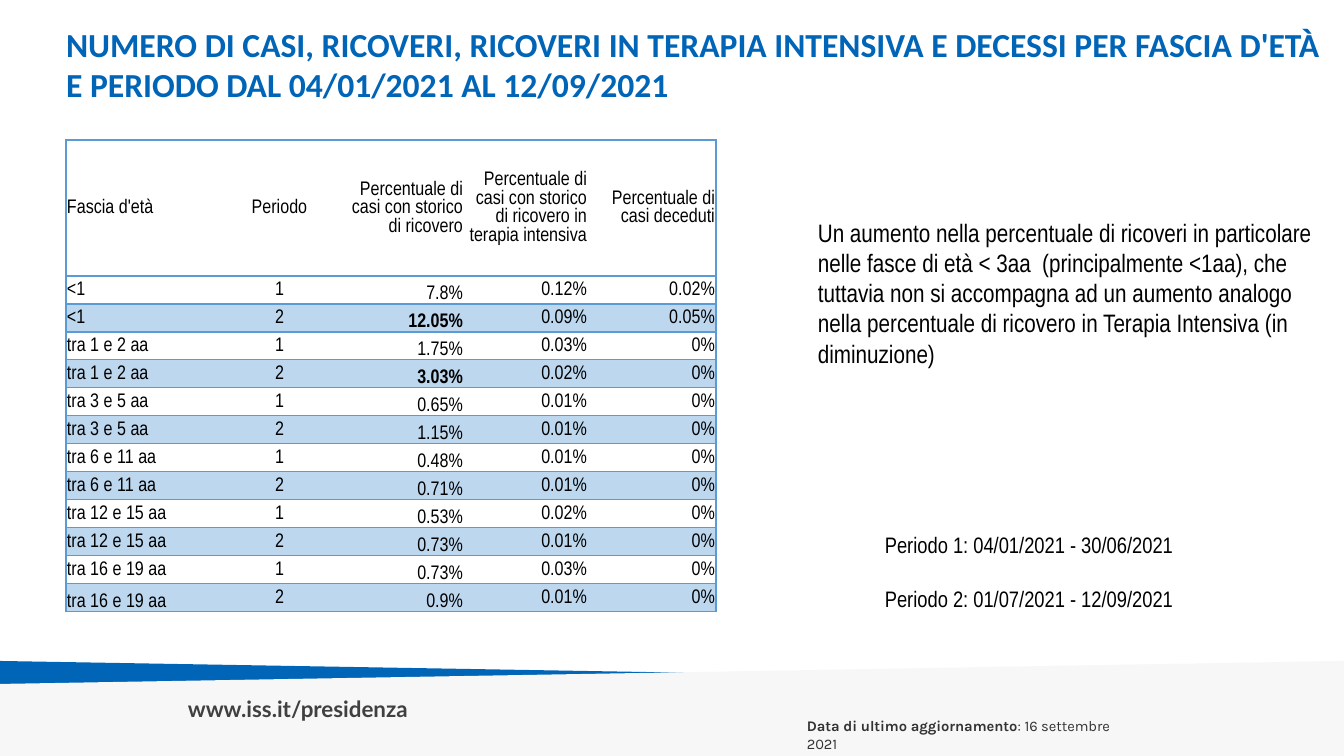
from dataclasses import dataclass
from typing import NamedTuple

from lxml.etree import SubElement
from pptx import Presentation
from pptx.dml.color import RGBColor
from pptx.enum.text import MSO_ANCHOR, MSO_AUTO_SIZE, PP_ALIGN
from pptx.oxml.ns import qn
from pptx.util import Pt

EMU_PER_PX = 914400 / 100.8
BLUE, PALE_BLUE, RULE_BLUE = "0064B7", "BDD7EE", "5B9BD5"
WHITE, BLACK, LIGHT_GREY = "FFFFFF", "000000", "F7F7F7"
NARROW = "Arial Narrow"


class Span(NamedTuple):
    text: str
    bold: bool = False


class Style(NamedTuple):
    font: str
    size: float
    color: str


@dataclass
class Note:
    box: tuple[int, int, int, int]
    style: Style
    paragraphs: list[list[Span]]
    wrap: bool = True
    gap: float = 0


class AgeRow(NamedTuple):
    age: str
    period: str
    admitted: str
    intensive: str
    deceased: str


class Column(NamedTuple):
    width: int
    align: PP_ALIGN


TITLE = ("NUMERO DI CASI, RICOVERI, RICOVERI IN TERAPIA INTENSIVA E DECESSI "
         "PER FASCIA D'ETÀ E PERIODO DAL 04/01/2021 AL 12/09/2021")
COLUMNS = [
    Column(152, PP_ALIGN.LEFT),
    Column(123, PP_ALIGN.CENTER),
    Column(123, PP_ALIGN.RIGHT),
    Column(124, PP_ALIGN.RIGHT),
    Column(128, PP_ALIGN.RIGHT),
]
ROWS = [
    AgeRow("Fascia d'età", "Periodo", "Percentuale di casi con storico di ricovero",
           "Percentuale di casi con storico di ricovero in terapia intensiva",
           "Percentuale di casi deceduti"),
    AgeRow("<1", "1", "7.8%", "0.12%", "0.02%"),
    AgeRow("<1", "2", "12.05%", "0.09%", "0.05%"),
    AgeRow("tra 1 e 2 aa", "1", "1.75%", "0.03%", "0%"),
    AgeRow("tra 1 e 2 aa", "2", "3.03%", "0.02%", "0%"),
    AgeRow("tra 3 e 5 aa", "1", "0.65%", "0.01%", "0%"),
    AgeRow("tra 3 e 5 aa", "2", "1.15%", "0.01%", "0%"),
    AgeRow("tra 6 e 11 aa", "1", "0.48%", "0.01%", "0%"),
    AgeRow("tra 6 e 11 aa", "2", "0.71%", "0.01%", "0%"),
    AgeRow("tra 12 e 15 aa", "1", "0.53%", "0.02%", "0%"),
    AgeRow("tra 12 e 15 aa", "2", "0.73%", "0.01%", "0%"),
    AgeRow("tra 16 e 19 aa", "1", "0.73%", "0.03%", "0%"),
    AgeRow("tra 16 e 19 aa", "2", "0.9%", "0.01%", "0%"),
]
HIGHLIGHTS = {"12.05%", "3.03%"}
HEADER_HEIGHT, ROW_HEIGHT = 136, 28

WEDGES = [
    (BLUE, [(1344, 684), (0, 661), (0, 756), (1344, 756)]),
    (LIGHT_GREY, [(0, 684), (1344, 661), (1344, 756), (0, 756)]),
]
NOTES = [
    Note((178, 690, 243, 37), Style("Lato", 16, "404040"),
         [[Span("www.iss.it/presidenza", True)]], wrap=False),
    Note((875, 526, 469, 122), Style(NARROW, 16, BLACK),
         [[Span("Periodo 1: 04/01/2021 - 30/06/2021")],
          [Span("Periodo 2: 01/07/2021 - 12/09/2021")]], gap=19.5),
    Note((797, 712, 339, 28), Style("Karla", 10.5, "333333"),
         [[Span("Data di ultimo aggiornamento", True), Span(": 16 settembre 2021")]]),
    Note((808, 212, 521, 163), Style(NARROW, 18, BLACK),
         [[Span("Un aumento nella percentuale di ricoveri in particolare nelle fasce "
                "di età < 3aa  (principalmente <1aa), che tuttavia non si accompagna ad "
                "un aumento analogo nella percentuale di ricovero in Terapia Intensiva "
                "(in diminuzione)")]]),
]


def px(length: int) -> int:
    return round(length * EMU_PER_PX)


def rgb(color: str) -> RGBColor:
    return RGBColor.from_string(color)


def add_span(paragraph, span: Span, style: Style) -> None:
    run = paragraph.add_run()
    run.text = span.text
    run.font.name = style.font
    run.font.size = Pt(style.size)
    run.font.bold = span.bold
    run.font.color.rgb = rgb(style.color)


def place_title(slide) -> None:
    title = slide.shapes.title
    title.left, title.top, title.width, title.height = map(px, (56, 19, 1288, 92))
    frame = title.text_frame
    frame.word_wrap = True
    frame.auto_size = MSO_AUTO_SIZE.NONE
    frame.vertical_anchor = MSO_ANCHOR.TOP
    frame.paragraphs[0].alignment = PP_ALIGN.LEFT
    add_span(frame.paragraphs[0], Span(TITLE, True), Style("Calibri", 24, BLUE))


def draw_wedge(slide, color: str, corners: list[tuple[int, int]]) -> None:
    builder = slide.shapes.build_freeform(*corners[0], scale=EMU_PER_PX)
    builder.add_line_segments(corners[1:], close=True)
    wedge = builder.convert_to_shape()
    wedge.shadow.inherit = False
    wedge.fill.solid()
    wedge.fill.fore_color.rgb = rgb(color)
    wedge.line.fill.background()


def draw_note(slide, note: Note) -> None:
    frame = slide.shapes.add_textbox(*map(px, note.box)).text_frame
    frame.word_wrap = note.wrap
    for index, spans in enumerate(note.paragraphs):
        paragraph = frame.add_paragraph() if index else frame.paragraphs[0]
        if index:
            paragraph.space_before = Pt(note.gap)
        for span in spans:
            add_span(paragraph, span, note.style)


def rule_cell(cell, column: int) -> None:
    visible = {"lnL": column == 0, "lnR": column == len(COLUMNS) - 1,
               "lnT": True, "lnB": True}
    properties = cell._tc.get_or_add_tcPr()
    for side, shown in visible.items():
        line = SubElement(properties, qn(f"a:{side}"), w=str(Pt(1)))
        if shown:
            fill = SubElement(line, qn("a:solidFill"))
            SubElement(fill, qn("a:srgbClr"), val=RULE_BLUE)
        else:
            SubElement(line, qn("a:noFill"))


def fill_cell(cell, row: int, column: int, text: str) -> None:
    rule_cell(cell, column)
    cell.fill.solid()
    cell.fill.fore_color.rgb = rgb(PALE_BLUE if row and row % 2 == 0 else WHITE)
    cell.margin_left = cell.margin_right = cell.margin_top = px(1)
    cell.margin_bottom = 0
    at_bottom = (column == 2 and row > 0) or (column == 0 and row == len(ROWS) - 1)
    cell.vertical_anchor = MSO_ANCHOR.BOTTOM if at_bottom else MSO_ANCHOR.MIDDLE
    paragraph = cell.text_frame.paragraphs[0]
    paragraph.alignment = COLUMNS[column].align
    add_span(paragraph, Span(text, text in HIGHLIGHTS), Style(NARROW, 14, BLACK))


def draw_age_table(slide) -> None:
    width = sum(column.width for column in COLUMNS)
    height = HEADER_HEIGHT + ROW_HEIGHT * (len(ROWS) - 1)
    ages = slide.shapes.add_table(len(ROWS), len(COLUMNS),
                                  *map(px, (66, 140, width, height))).table
    ages.first_row = ages.horz_banding = False
    for index, column in enumerate(COLUMNS):
        ages.columns[index].width = px(column.width)
    for row, entry in enumerate(ROWS):
        ages.rows[row].height = px(ROW_HEIGHT if row else HEADER_HEIGHT)
        for column, text in enumerate(entry):
            fill_cell(ages.cell(row, column), row, column, text)


def main() -> None:
    deck = Presentation()
    deck.slide_width, deck.slide_height = px(1344), px(756)
    slide = deck.slides.add_slide(deck.slide_layouts[5])
    for color, corners in WEDGES:
        draw_wedge(slide, color, corners)
    place_title(slide)
    draw_age_table(slide)
    for note in NOTES:
        draw_note(slide, note)
    deck.save("out.pptx")


if __name__ == "__main__":
    main()
